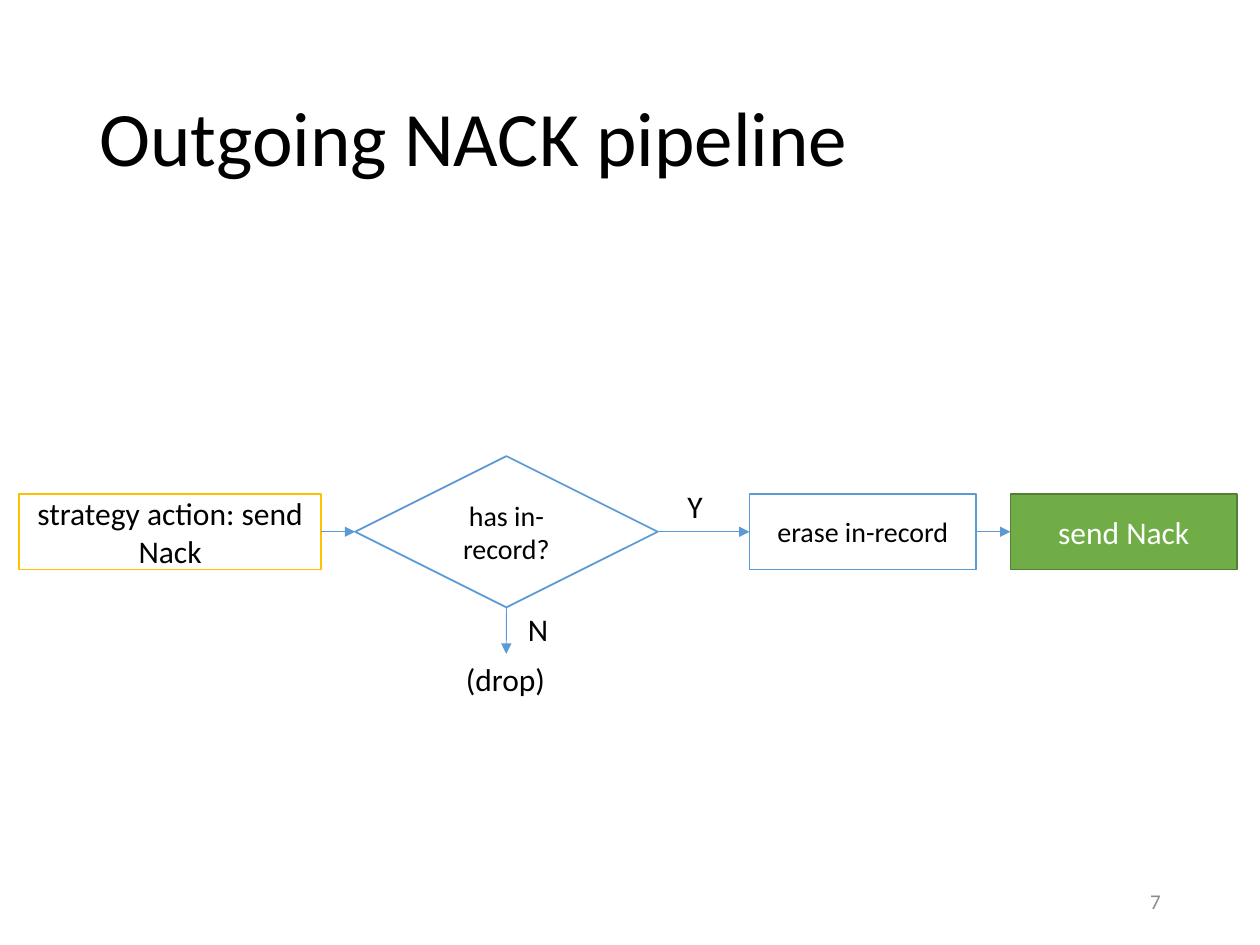
import pptx
import pptx.util
import pptx.oxml.ns
import lxml.etree
from pptx.dml.color import RGBColor
from pptx.enum.shapes import MSO_CONNECTOR, MSO_SHAPE
from pptx.enum.text import MSO_ANCHOR, MSO_AUTO_SIZE, PP_ALIGN
from pptx.util import Cm

BLACK = RGBColor(0x00, 0x00, 0x00)
WHITE = RGBColor(0xFF, 0xFF, 0xFF)
GREY = RGBColor(0x8C, 0x8C, 0x8C)
BLUE = RGBColor(0x5B, 0x9B, 0xD5)
GOLD = RGBColor(0xFF, 0xC0, 0x00)
GREEN = RGBColor(0x70, 0xAD, 0x47)
DARK_GREEN = RGBColor(0x53, 0x80, 0x35)

TOP, LEFT, BOTTOM, RIGHT = range(4)  # connection sites


def write(sp, text, size=18, color=BLACK, align=PP_ALIGN.LEFT,
          anchor=MSO_ANCHOR.TOP, wrap=True, spacing=None):
    tf = sp.text_frame
    tf.word_wrap = wrap
    tf.vertical_anchor = anchor
    p = tf.paragraphs[0]
    p.alignment = align
    p.line_spacing = spacing
    r = p.add_run()
    r.text = text
    r.font.name = "Calibri"
    r.font.size = pptx.util.Pt(size)
    r.font.color.rgb = color


def add_text(slide, text, x, y, w, h, **fmt):
    sp = slide.shapes.add_textbox(Cm(x), Cm(y), Cm(w), Cm(h))
    write(sp, text, **fmt)
    return sp


def add_label(slide, text, x, y, w):
    sp = add_text(slide, text, x, y, w, 1.03, wrap=False)
    sp.text_frame.auto_size = MSO_AUTO_SIZE.SHAPE_TO_FIT_TEXT
    return sp


def add_step(slide, text, x, mid_y, w, h=1.52, kind=MSO_SHAPE.RECTANGLE,
             fill=WHITE, line=BLUE, **fmt):
    """Add a flowchart node centred vertically on mid_y."""
    sp = slide.shapes.add_shape(kind, Cm(x), Cm(mid_y - h / 2), Cm(w), Cm(h))
    sp.shadow.inherit = False
    sp.fill.solid()
    sp.fill.fore_color.rgb = fill
    sp.line.color.rgb = line
    sp.line.width = pptx.util.Pt(1)
    write(sp, text, align=PP_ALIGN.CENTER, anchor=MSO_ANCHOR.MIDDLE, **fmt)
    return sp


def add_arrow(slide, start, end, start_site=RIGHT, end_site=LEFT):
    cxn = slide.shapes.add_connector(MSO_CONNECTOR.STRAIGHT, 0, 0, 0, 0)
    cxn.begin_connect(start, start_site)
    cxn.end_connect(end, end_site)
    cxn.line.color.rgb = BLUE
    cxn.line.width = pptx.util.Pt(0.5)
    qn = pptx.oxml.ns.qn
    ln = cxn.line._get_or_add_ln()
    lxml.etree.SubElement(ln, qn("a:tailEnd"), type="triangle")
    lxml.etree.SubElement(cxn._element.spPr, qn("a:effectLst"))


def add_pipeline(slide, x, mid_y):
    """Add the flowchart, starting at x with its main row along mid_y."""
    strategy = add_step(slide, "strategy action: send Nack", x, mid_y, 6.1,
                        line=GOLD)
    decision = add_step(slide, "has in-record?", x + 6.78, mid_y, 6.1, h=3.05,
                        kind=MSO_SHAPE.FLOWCHART_DECISION, size=16)
    erase = add_step(slide, "erase in-record", x + 14.73, mid_y, 4.57, size=16)
    send = add_step(slide, "send Nack", x + 19.99, mid_y, 4.57,
                    fill=GREEN, line=DARK_GREEN, color=WHITE)
    drop = add_label(slide, "(drop)", x + 8.76, mid_y + 2.46, 2.13)

    row = [strategy, decision, erase, send]
    for start, end in zip(row, row[1:]):
        add_arrow(slide, start, end)
    add_arrow(slide, decision, drop, BOTTOM, TOP)

    add_label(slide, "Y", x + 13.23, mid_y - 1.02, 0.81)
    add_label(slide, "N", x + 10.01, mid_y + 1.45, 0.91)


def main():
    prs = pptx.Presentation()
    prs.slide_width, prs.slide_height = Cm(25.4), Cm(19.05)
    slide = prs.slides.add_slide(prs.slide_layouts[6])
    add_text(slide, "Outgoing NACK pipeline", 1.75, 1.02, 21.9, 3.68,
             size=44, anchor=MSO_ANCHOR.MIDDLE, spacing=0.9)
    add_pipeline(slide, 0.38, 10.72)
    add_text(slide, "7", 17.93, 17.65, 5.72, 1.02, size=12, color=GREY,
             align=PP_ALIGN.RIGHT, anchor=MSO_ANCHOR.MIDDLE)
    prs.save("out.pptx")


if __name__ == "__main__":
    main()
